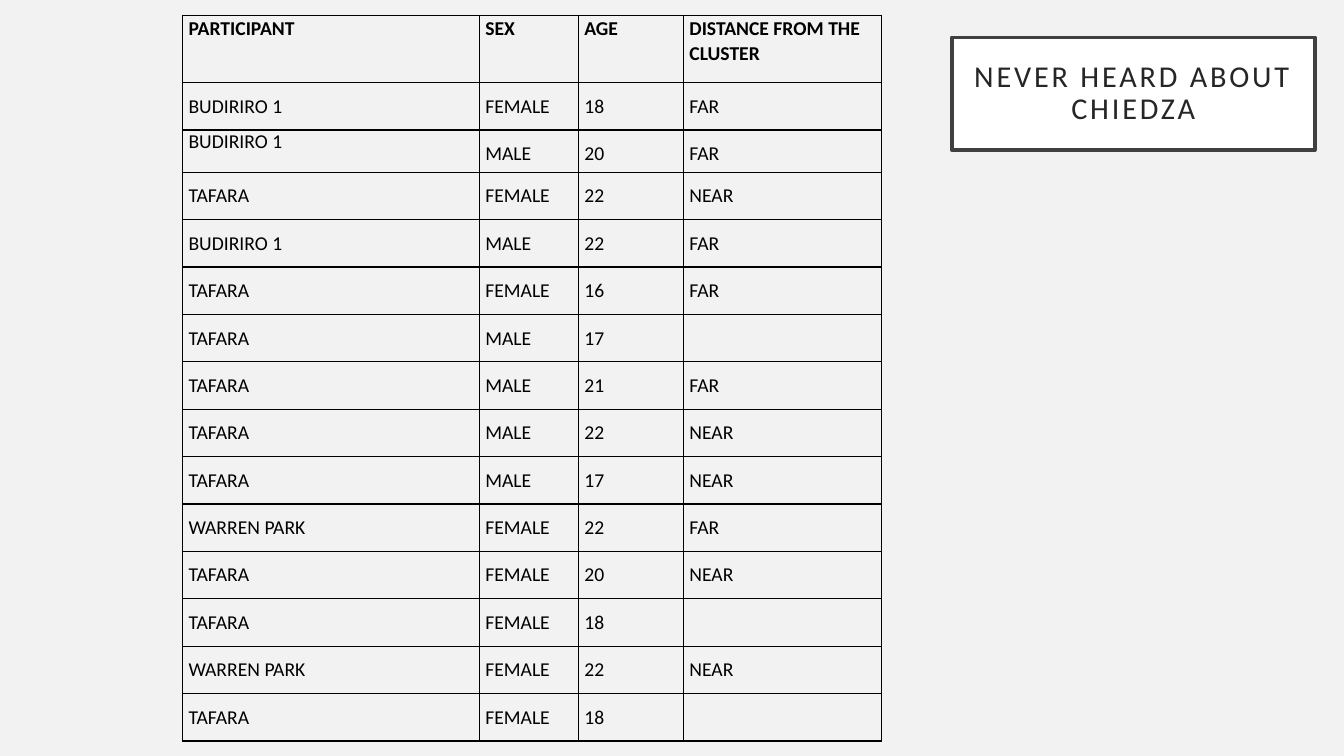
from dataclasses import dataclass

from lxml import etree
from pptx import Presentation
from pptx.dml.color import RGBColor
from pptx.enum.text import MSO_ANCHOR, MSO_AUTO_SIZE, PP_ALIGN
from pptx.oxml.ns import qn
from pptx.util import Inches, Pt

CENTER = PP_ALIGN.CENTER
MIDDLE = MSO_ANCHOR.MIDDLE
NO_AUTOFIT = MSO_AUTO_SIZE.NONE
TITLE_ONLY = 5


@dataclass(frozen=True)
class Theme:
    font: str = "Calibri"
    background: str = "F2F2F2"
    panel: str = "FFFFFF"
    frame: str = "404040"
    title: str = "262626"
    ink: str = "000000"
    title_size: float = 21.6
    table_size: float = 14
    title_tracking: float = 2
    frame_width: float = 2.5
    border_width: float = 1


def rgb(color):
    return RGBColor.from_string(color)


class SlideBuilder:
    """Places elements by percentages of the slide's width and height."""

    def __init__(self, prs, theme):
        self.prs, self.theme = prs, theme
        self.slide = prs.slides.add_slide(prs.slide_layouts[TITLE_ONLY])
        fill = self.slide.background.fill
        fill.solid()
        fill.fore_color.rgb = rgb(theme.background)

    def x(self, share):
        return round(self.prs.slide_width * share / 100)

    def y(self, share):
        return round(self.prs.slide_height * share / 100)

    def add_run(self, p, text, size, color, bold=False):
        r = p.add_run()
        r.text = text
        r.font.name = self.theme.font
        r.font.size = Pt(size)
        r.font.bold = bold
        r.font.color.rgb = rgb(color)
        return r

    def title(self, text, left, top, width, height):
        theme = self.theme
        sp = self.slide.shapes.title
        sp.left, sp.top = self.x(left), self.y(top)
        sp.width, sp.height = self.x(width), self.y(height)
        sp.fill.solid()
        sp.fill.fore_color.rgb = rgb(theme.panel)
        sp.line.color.rgb = rgb(theme.frame)
        sp.line.width = Pt(theme.frame_width)
        tf = sp.text_frame
        tf.word_wrap = True
        tf.auto_size = NO_AUTOFIT
        tf.vertical_anchor = MIDDLE
        tf.margin_left = tf.margin_right = Inches(0.2)
        tf.margin_top = tf.margin_bottom = Inches(0.2)
        p = tf.paragraphs[0]
        p.alignment = CENTER
        p.line_spacing = 0.9
        r = self.add_run(p, text, theme.title_size, theme.title)
        r.font._element.set("spc", str(round(theme.title_tracking * 100)))

    def table(self, rows, left, top, widths, heights, spacing):
        """Draw rows; spacing(row, column) gives a cell's line spacing."""
        frame = self.slide.shapes.add_table(
            len(rows), len(widths), self.x(left), self.y(top),
            self.x(sum(widths)), self.y(sum(heights)))
        table = frame.table
        table.first_row = table.horz_banding = False
        for column, width in zip(table.columns, widths):
            column.width = self.x(width)
        for row, height in zip(table.rows, heights):
            row.height = self.y(height)
        for i, values in enumerate(rows):
            for j, text in enumerate(values):
                self.cell(table.cell(i, j), text, spacing(i, j), bold=i == 0)

    def cell(self, cell, text, line_spacing, bold):
        self.borders(cell)
        cell.fill.background()
        if not text:
            return
        cell.margin_left = cell.margin_right = Inches(0.06)
        cell.margin_top = cell.margin_bottom = 0
        p = cell.text_frame.paragraphs[0]
        p.line_spacing = line_spacing
        self.add_run(p, text, self.theme.table_size, self.theme.ink, bold)

    def borders(self, cell):
        tc_pr = cell._tc.get_or_add_tcPr()
        for side in ("lnL", "lnR", "lnT", "lnB"):
            ln = etree.SubElement(tc_pr, qn(f"a:{side}"),
                                  w=str(Pt(self.theme.border_width)))
            fill = etree.SubElement(ln, qn("a:solidFill"))
            etree.SubElement(fill, qn("a:srgbClr"), val=self.theme.ink)


PARTICIPANTS = [
    ("PARTICIPANT", "SEX", "AGE", "DISTANCE FROM THE CLUSTER"),
    ("BUDIRIRO 1", "FEMALE", "18", "FAR"),
    ("BUDIRIRO 1", "MALE", "20", "FAR"),
    ("TAFARA", "FEMALE", "22", "NEAR"),
    ("BUDIRIRO 1", "MALE", "22", "FAR"),
    ("TAFARA", "FEMALE", "16", "FAR"),
    ("TAFARA", "MALE", "17", ""),
    ("TAFARA", "MALE", "21", "FAR"),
    ("TAFARA", "MALE", "22", "NEAR"),
    ("TAFARA", "MALE", "17", "NEAR"),
    ("WARREN PARK", "FEMALE", "22", "FAR"),
    ("TAFARA", "FEMALE", "20", "NEAR"),
    ("TAFARA", "FEMALE", "18", ""),
    ("WARREN PARK", "FEMALE", "22", "NEAR"),
    ("TAFARA", "FEMALE", "18", ""),
]
COLUMN_WIDTHS = [22.08, 7.37, 7.82, 14.72]
ROW_HEIGHTS = [8.93, 6.27, 5.6] + [6.27] * (len(PARTICIPANTS) - 3)


def participant_spacing(row, column):
    if row == 0:
        return 1.07
    return 1.0 if (row, column) == (2, 0) else 1.5


def main():
    prs = Presentation()
    prs.slide_width, prs.slide_height = Inches(13.33), Inches(7.5)
    s = SlideBuilder(prs, Theme())
    s.title("NEVER HEARD ABOUT CHIEDZA", 70.82, 4.93, 27.01, 14.93)
    s.table(PARTICIPANTS, 13.58, 2, COLUMN_WIDTHS, ROW_HEIGHTS,
            participant_spacing)
    prs.save("out.pptx")


if __name__ == "__main__":
    main()
